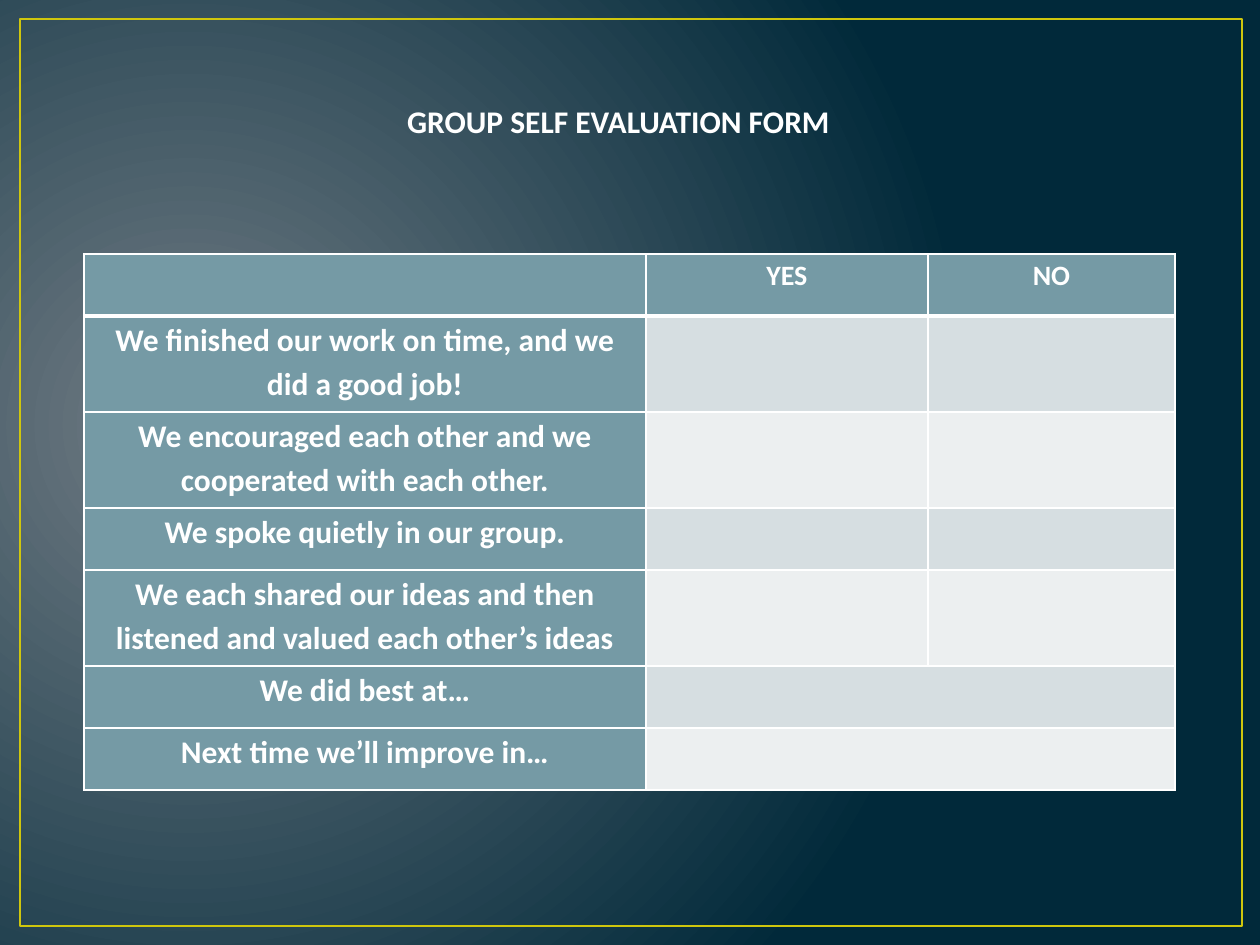
from lxml.etree import SubElement
from pptx import Presentation
from pptx.dml.color import RGBColor
from pptx.enum.shapes import MSO_SHAPE
from pptx.enum.text import MSO_ANCHOR, MSO_AUTO_SIZE, PP_ALIGN
from pptx.oxml.ns import qn
from pptx.util import Emu, Pt

TITLE = "GROUP SELF EVALUATION FORM"
HEADINGS = ["", "YES", "NO"]
SHORT, TALL = 62, 96
# statement, row height in px, whether the answer spans YES and NO
STATEMENTS = [
    ("We finished our work on time, and we did a good job!", TALL, False),
    ("We encouraged each other and we cooperated with each other.", TALL, False),
    ("We spoke quietly in our group.", SHORT, False),
    ("We each shared our ideas and then listened and valued each other’s ideas", TALL, False),
    ("We did best at…", SHORT, True),
    ("Next time we’ll improve in…", SHORT, True),
]
COLUMN_WIDTHS = [562, 282, 247]
TABLE_LEFT, TABLE_TOP = 84, 254

THEME = {
    "font": "Calibri",
    "text": "FFFFFF",
    "glow": "717C84",
    "backdrop": "01293A",
    "frame": "CFC60D",
    "label": "759AA5",
    "bands": ["D6DEE1", "ECEFF0"],
    "border": "FFFFFF",
    "title_size": 18,
    "heading_size": 16,
    "statement_size": 18,
}


def px(length):
    return Emu(round(length * 914400 / 126))


def rgb(name):
    return RGBColor.from_string(THEME[name])


def style_text(paragraph, size):
    paragraph.alignment = PP_ALIGN.CENTER
    font = paragraph.font
    font.name, font.size, font.bold = THEME["font"], Pt(THEME[size]), True
    font.color.rgb = rgb("text")


def paint_background(slide):
    """Radial glow centred left of the middle."""
    fill = slide.background.fill
    fill.gradient()
    for stop, position, name in zip(fill.gradient_stops, (0, 1), ("glow", "backdrop")):
        stop.position = position
        stop.color.rgb = rgb(name)
    gradient = slide.element.find(".//" + qn("a:gradFill"))
    gradient.remove(gradient.find(qn("a:lin")))
    circle = SubElement(gradient, qn("a:path"), {"path": "circle"})
    SubElement(circle, qn("a:fillToRect"),
               {"l": "15000", "t": "50000", "r": "85000", "b": "60000"})


def add_frame(slide):
    frame = slide.shapes.add_shape(
        MSO_SHAPE.RECTANGLE, px(20), px(19), px(1222), px(907))
    frame.shadow.inherit = False
    frame.fill.background()
    frame.line.color.rgb = rgb("frame")
    frame.line.width = Pt(1.5)


def place_title(slide):
    title = slide.shapes.title
    title.left, title.top, title.width, title.height = map(px, (384, 96, 469, 50))
    frame = title.text_frame
    frame.text = TITLE
    frame.word_wrap = False
    frame.auto_size = MSO_AUTO_SIZE.NONE
    frame.vertical_anchor = MSO_ANCHOR.MIDDLE
    style_text(frame.paragraphs[0], "title_size")


def draw_borders(cell, top, bottom):
    """Borders go ahead of the fill in a cell's properties, so set the fill afterwards."""
    properties = cell._tc.get_or_add_tcPr()
    for side, width in (("L", 1), ("R", 1), ("T", top), ("B", bottom)):
        line = SubElement(properties, qn(f"a:ln{side}"), {"w": str(Pt(width))})
        color = SubElement(SubElement(line, qn("a:solidFill")), qn("a:srgbClr"))
        color.set("val", THEME["border"])


def fill_cell(cell, text, size, color):
    cell.fill.solid()
    cell.fill.fore_color.rgb = RGBColor.from_string(color)
    cell.margin_left = cell.margin_right = px(9)
    cell.margin_top = cell.margin_bottom = 0
    cell.text = text
    paragraph = cell.text_frame.paragraphs[0]
    paragraph.line_spacing = 1.15
    style_text(paragraph, size)


def add_form(slide):
    rows = [(HEADINGS, SHORT, False)]
    rows += [([text, "", ""], height, spans) for text, height, spans in STATEMENTS]
    form = slide.shapes.add_table(
        len(rows), len(HEADINGS), px(TABLE_LEFT), px(TABLE_TOP),
        px(sum(COLUMN_WIDTHS)), px(sum(height for _, height, _ in rows))).table
    for column, width in zip(form.columns, COLUMN_WIDTHS):
        column.width = px(width)
    for r, (texts, height, spans) in enumerate(rows):
        form.rows[r].height = px(height)
        is_heading = r == 0
        size = "heading_size" if is_heading else "statement_size"
        for c, text in enumerate(texts):
            is_label = is_heading or c == 0
            color = THEME["label"] if is_label else THEME["bands"][(r - 1) % 2]
            cell = form.cell(r, c)
            draw_borders(cell, top=3 if r == 1 else 1, bottom=3 if is_heading else 1)
            fill_cell(cell, text, size, color)
        if spans:
            form.cell(r, 1).merge(form.cell(r, 2))


def main():
    deck = Presentation()
    deck.slide_width, deck.slide_height = px(1260), px(945)
    slide = deck.slides.add_slide(deck.slide_layouts[5])
    paint_background(slide)
    add_frame(slide)
    place_title(slide)
    add_form(slide)
    deck.save("out.pptx")


if __name__ == "__main__":
    main()
